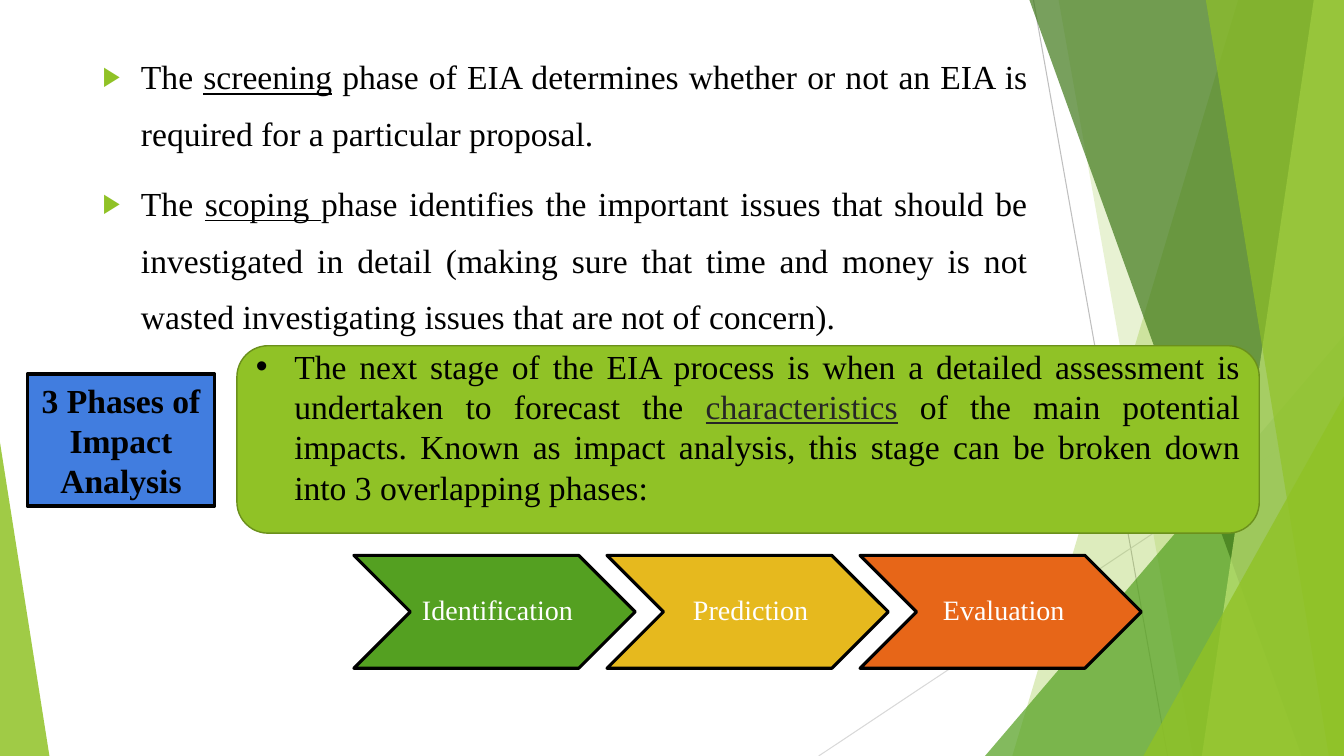
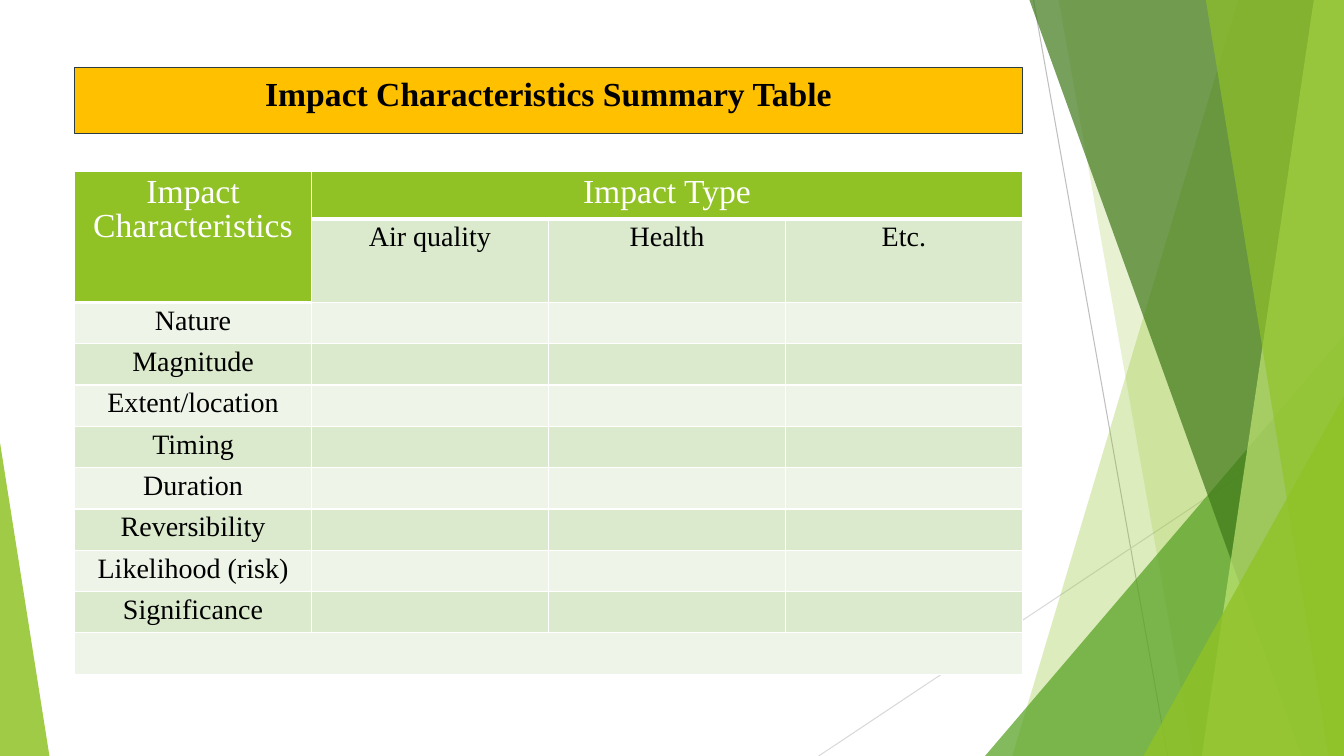
from pptx import Presentation
from pptx.dml.color import RGBColor
from pptx.enum.shapes import MSO_CONNECTOR, MSO_SHAPE
from pptx.enum.text import MSO_ANCHOR, PP_ALIGN
from pptx.oxml.ns import qn
from pptx.util import Emu, Pt
from lxml.etree import SubElement, Element

FONT = "Times New Roman"
BLACK = RGBColor(0x00, 0x00, 0x00)
WHITE = RGBColor(0xFF, 0xFF, 0xFF)
CHARCOAL = RGBColor(0x26, 0x26, 0x26)
SLATE = RGBColor(0x2C, 0x3C, 0x43)
LIME = RGBColor(0x90, 0xC2, 0x26)
OLIVE = RGBColor(0x6B, 0x90, 0x1C)
GREEN = RGBColor(0x54, 0xA0, 0x21)
FOREST = RGBColor(0x3F, 0x78, 0x19)
PALE_LIME = RGBColor(0xC0, 0xE4, 0x74)
GOLD = RGBColor(0xE6, 0xB9, 0x1E)
ORANGE = RGBColor(0xE7, 0x66, 0x18)
AMBER = RGBColor(0xFF, 0xC0, 0x00)
BLUE = RGBColor(0x41, 0x7D, 0xDF)
BAND_DARK = RGBColor(0xDB, 0xE9, 0xCD)
BAND_LIGHT = RGBColor(0xEE, 0xF4, 0xE8)
GREY = RGBColor(0xBF, 0xBF, 0xBF)
LIGHT_GREY = RGBColor(0xD9, 0xD9, 0xD9)

WIDTH, HEIGHT = 1333, 750
HANGING = 38

RAYS = [((1025, 0), (1158, HEIGHT), GREY), ((WIDTH, 403), (812, HEIGHT), LIGHT_GREY)]
FACETS = [
    (1228, 1004, LIME, 30),
    (1050, 1183, LIME, 20),
    ((977, 333, 356, 417), 1, GREEN, 72),
    (1021, 1291, FOREST, 70),
    (1303, 1192, PALE_LIME, 70),
    (1196, 1318, LIME, 65),
    ((1134, 393, 199, 357), 1, LIME, 80),
    ((0, 439, 49, 311), 0, LIME, 85),
]
SCREENING_AND_SCOPING = [
    "The _screening_ phase of EIA determines whether or not an EIA is required "
    "for a particular proposal.",
    "The _scoping _phase identifies the important issues that should be "
    "investigated in detail (making sure that time and money is not wasted "
    "investigating issues that are not of concern).",
]
NEXT_STAGE = (
    "The next stage of the EIA process is when a detailed assessment is "
    "undertaken to forecast the _characteristics_ of the main potential impacts. "
    "Known as impact analysis, this stage can be broken down into 3 overlapping "
    "phases:"
)
PHASES = [("Identification", GREEN), ("Prediction", GOLD), ("Evaluation", ORANGE)]
IMPACT_TYPES = ["Air quality", "Health", "Etc."]
CHARACTERISTICS = [
    "Nature", "Magnitude", "Extent/location", "Timing", "Duration",
    "Reversibility", "Likelihood (risk)", "Significance",
]


def px(length):
    return Emu(length * 9144)


def write(frame, *paragraphs, size=24, color=BLACK, bold=False,
          align=PP_ALIGN.CENTER, anchor=None, insets=None, spacing=None,
          before=None, bullet=None, bullet_color=None, bullet_size=100,
          underlined_color=None):
    frame.word_wrap = True
    if anchor is not None:
        frame.vertical_anchor = anchor
    if insets:
        (frame.margin_left, frame.margin_top,
         frame.margin_right, frame.margin_bottom) = map(px, insets)
    for index, content in enumerate(paragraphs):
        paragraph = frame.add_paragraph() if index else frame.paragraphs[0]
        paragraph.alignment = align
        if spacing:
            paragraph.line_spacing = spacing
        if before:
            paragraph.space_before = Pt(before)
        if bullet:
            add_bullet(paragraph, bullet, bullet_color or color, bullet_size)
        for part, words in enumerate(content.split("_")):
            underlined = part % 2 == 1
            run = paragraph.add_run()
            run.text = words
            font = run.font
            font.name, font.size, font.bold = FONT, Pt(size), bold
            font.underline = underlined
            font.color.rgb = underlined_color if underlined and underlined_color else color


def add_bullet(paragraph, mark, color, percent):
    properties = paragraph._p.get_or_add_pPr()
    properties.set("marL", str(px(HANGING)))
    properties.set("indent", str(-px(HANGING)))
    SubElement(SubElement(properties, qn("a:buClr")), qn("a:srgbClr")).set("val", str(color))
    SubElement(properties, qn("a:buSzPct")).set("val", str(percent * 1000))
    SubElement(properties, qn("a:buFont")).set("typeface", "Arial")
    SubElement(properties, qn("a:buChar")).set("char", mark)


def paint(shape, fill, opacity=100, line=None, line_width=1):
    shape.shadow.inherit = False
    shape.fill.solid()
    shape.fill.fore_color.rgb = fill
    if opacity < 100:
        tint = shape._element.spPr.find(".//" + qn("a:srgbClr"))
        SubElement(tint, qn("a:alpha")).set("val", str(opacity * 1000))
    if line is None:
        shape.line.fill.background()
    else:
        shape.line.color.rgb = line
        shape.line.width = Pt(line_width)


def add_panel(slide, preset, box, fill, **look):
    panel = slide.shapes.add_shape(preset, *map(px, box))
    paint(panel, fill, **look)
    return panel


def draw_ray(slide, start, end, color):
    ray = slide.shapes.add_connector(
        MSO_CONNECTOR.STRAIGHT, *map(px, start), *map(px, end))
    ray.line.color.rgb = color
    ray.line.width = Pt(0.75)
    SubElement(ray._element.spPr, qn("a:effectLst"))


def draw_backdrop(slide):
    for ray in RAYS:
        draw_ray(slide, *ray)
    for place, slant, color, opacity in FACETS:
        if isinstance(place, tuple):
            facet = add_panel(slide, MSO_SHAPE.ISOSCELES_TRIANGLE, place, color, opacity=opacity)
            facet.adjustments[0] = slant
        else:
            outline = slide.shapes.build_freeform(place, 0, scale=px(1))
            outline.add_line_segments([(WIDTH, 0), (WIDTH, HEIGHT), (slant, HEIGHT)])
            paint(outline.convert_to_shape(), color, opacity=opacity)


def add_phase_arrows(slide, left, top, width, height):
    arrow_width = 279
    step = (width - arrow_width) // (len(PHASES) - 1)
    for index, (phase, color) in enumerate(PHASES):
        arrow = add_panel(slide, MSO_SHAPE.CHEVRON,
                          (left + index * step, top, arrow_width, height),
                          color, line=BLACK, line_width=2.25)
        write(arrow.text_frame, phase, size=20, color=WHITE, spacing=0.9,
              anchor=MSO_ANCHOR.MIDDLE, insets=(9, 3, 3, 3))


def set_borders(cell, bottom):
    properties = cell._tc.get_or_add_tcPr()
    for position, (side, width) in enumerate(
            [("lnL", 1), ("lnR", 1), ("lnT", 1), ("lnB", bottom)]):
        border = Element(qn(f"a:{side}"))
        border.set("w", str(Pt(width)))
        fill = SubElement(border, qn("a:solidFill"))
        SubElement(fill, qn("a:srgbClr")).set("val", str(WHITE))
        properties.insert(position, border)


def add_summary_table(slide, left, top, width):
    heights = [47, 83] + [41] * (len(CHARACTERISTICS) + 1)
    columns = len(IMPACT_TYPES) + 1
    table = slide.shapes.add_table(
        len(heights), columns, *map(px, (left, top, width, sum(heights)))).table
    table.first_row = table.horz_banding = False
    for column in table.columns:
        column.width = px(width // columns)
    for row_index, height in enumerate(heights):
        table.rows[row_index].height = px(height)
        for column_index in range(columns):
            cell = table.cell(row_index, column_index)
            heading = row_index == 0 or (row_index, column_index) == (1, 0)
            cell.fill.solid()
            cell.fill.fore_color.rgb = (
                LIME if heading else BAND_DARK if row_index % 2 else BAND_LIGHT)
            set_borders(cell, bottom=3 if heading else 1)

    last = len(heights) - 1
    table.cell(0, 0).merge(table.cell(1, 0))
    table.cell(0, 1).merge(table.cell(0, columns - 1))
    table.cell(last, 0).merge(table.cell(last, columns - 1))
    for column_index, heading in enumerate(["Impact Characteristics", "Impact Type"]):
        write(table.cell(0, column_index).text_frame, heading, color=WHITE, spacing=0.92)
    for column_index, impact_type in enumerate(IMPACT_TYPES, 1):
        write(table.cell(1, column_index).text_frame, impact_type, size=20, spacing=0.92)
    for row_index, characteristic in enumerate(CHARACTERISTICS, 2):
        write(table.cell(row_index, 0).text_frame, characteristic, size=20, spacing=0.92)


def build_phases_slide(slide):
    draw_backdrop(slide)
    introduction = slide.shapes.add_textbox(*map(px, (92, 35, 937, 323)))
    write(introduction.text_frame, *SCREENING_AND_SCOPING, align=PP_ALIGN.JUSTIFY,
          spacing=1.4, before=10, bullet="▶", bullet_color=LIME, bullet_size=80)
    next_stage = add_panel(slide, MSO_SHAPE.ROUNDED_RECTANGLE, (235, 343, 1014, 186),
                           LIME, line=OLIVE)
    write(next_stage.text_frame, NEXT_STAGE, align=PP_ALIGN.JUSTIFY, bullet="•",
          anchor=MSO_ANCHOR.MIDDLE, insets=(10, 0, 10, 26), underlined_color=CHARCOAL)
    add_phase_arrows(slide, 351, 551, 781, 112)
    label = add_panel(slide, MSO_SHAPE.RECTANGLE, (27, 371, 186, 131), BLUE,
                      line=BLACK, line_width=2.25)
    write(label.text_frame, "3 Phases of Impact Analysis", bold=True,
          anchor=MSO_ANCHOR.MIDDLE)


def build_summary_slide(slide):
    draw_backdrop(slide)
    title = add_panel(slide, MSO_SHAPE.RECTANGLE, (74, 67, 940, 66), AMBER,
                      line=SLATE, line_width=0.75)
    write(title.text_frame, "Impact Characteristics Summary Table", bold=True,
          anchor=MSO_ANCHOR.TOP)
    add_summary_table(slide, 74, 170, 940)


def main():
    presentation = Presentation()
    presentation.slide_width, presentation.slide_height = px(WIDTH), px(HEIGHT)
    blank = presentation.slide_layouts[6]
    for build in (build_phases_slide, build_summary_slide):
        build(presentation.slides.add_slide(blank))
    presentation.save("out.pptx")


if __name__ == "__main__":
    main()
